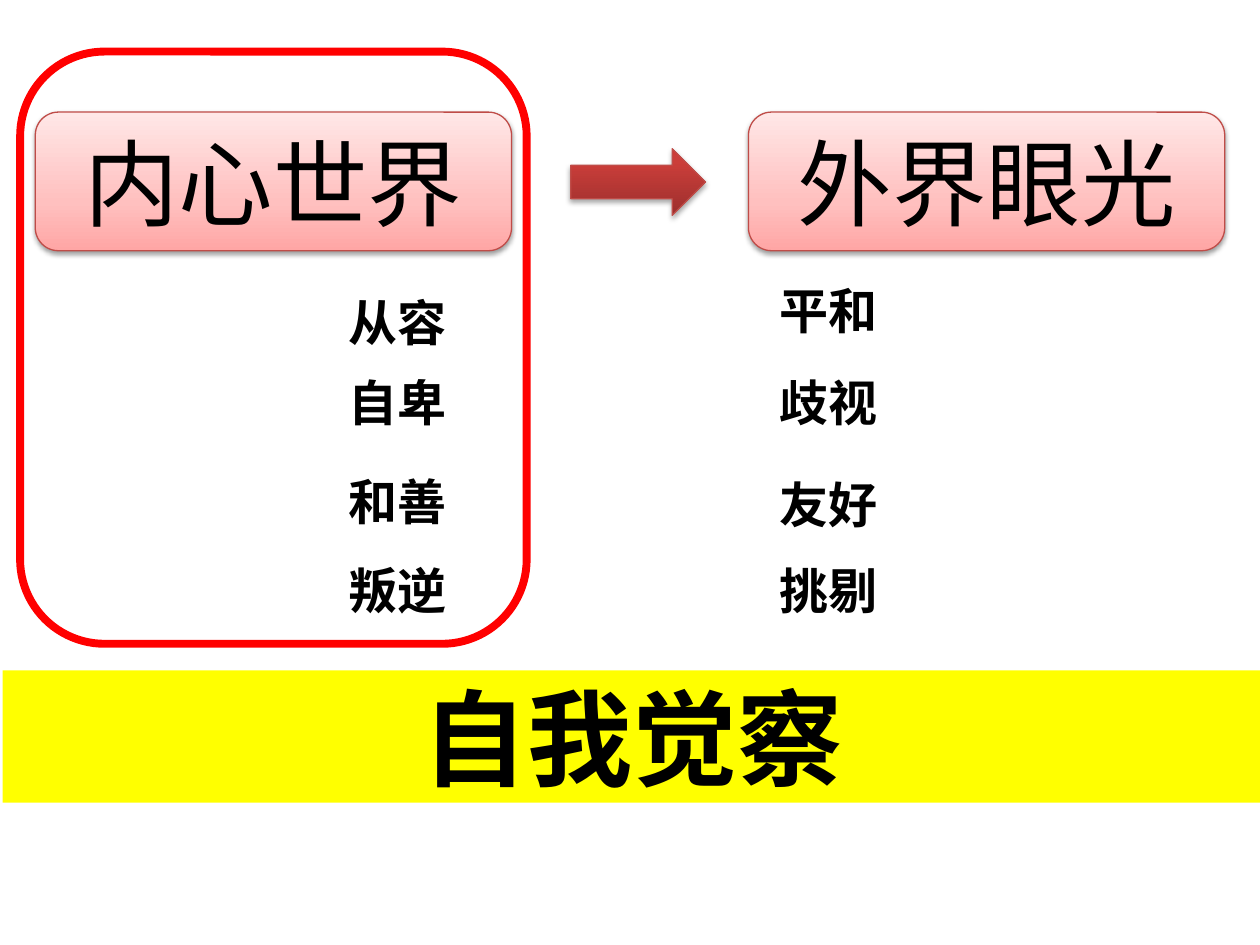
from lxml.etree import SubElement
from pptx import Presentation
from pptx.dml.color import RGBColor
from pptx.enum.shapes import MSO_SHAPE as Shape
from pptx.enum.text import MSO_ANCHOR as Anchor, MSO_AUTO_SIZE as AutoSize, PP_ALIGN as Align
from pptx.oxml import parse_xml
from pptx.oxml.ns import nsdecls, qn
from pptx.util import Inches, Pt

COLORS = {"text": "000000", "edge": "BF4C48", "frame": "FF0000", "banner": "FFFF00"}
PINK = [(0, "FFA6A5"), (35, "FFC0BF"), (100, "FFE7E7")]
RED = [(0, "9C2F2D"), (80, "CB3E3A"), (100, "CE3B37")]
CJK_FONT = "Noto Sans CJK SC"


def write(shape, text, size, font=CJK_FONT, bold=False, anchor=Anchor.MIDDLE):
    """Put one centred line of formatted text into a shape."""
    frame = shape.text_frame
    frame.word_wrap = True
    frame.auto_size = AutoSize.NONE
    frame.vertical_anchor = anchor
    paragraph = frame.paragraphs[0]
    paragraph.alignment = Align.CENTER
    run = paragraph.add_run()
    run.text = text
    run.font.name, run.font.size, run.font.bold = font, Pt(size), bold
    run.font.color.rgb = RGBColor.from_string(COLORS["text"])
    SubElement(run.font._element, qn("a:ea"), typeface=CJK_FONT)


def add_glossy(kind, left, top, width, height, stops, shadow_alpha, shadow_distance):
    """Add a shape with an upward gradient, a thin edge and a soft shadow below."""
    shape = slide.shapes.add_shape(
        kind, Inches(left), Inches(top), Inches(width), Inches(height))
    shape.line.color.rgb = RGBColor.from_string(COLORS["edge"])
    shape.line.width = Pt(0.75)
    shape.fill.background()
    properties = shape._element.spPr
    stop_xml = "".join(
        f'<a:gs pos="{share * 1000}"><a:srgbClr val="{color}"/></a:gs>' for share, color in stops)
    properties.replace(properties.find(qn("a:noFill")), parse_xml(
        f'<a:gradFill {nsdecls("a")} rotWithShape="1"><a:gsLst>{stop_xml}</a:gsLst>'
        '<a:lin ang="16200000" scaled="0"/></a:gradFill>'))
    properties.append(parse_xml(
        f'<a:effectLst {nsdecls("a")}><a:outerShdw blurRad="{Pt(3.1)}" '
        f'dist="{Pt(shadow_distance)}" dir="5400000" rotWithShape="0"><a:srgbClr val="000000">'
        f'<a:alpha val="{shadow_alpha * 1000}"/></a:srgbClr></a:outerShdw></a:effectLst>'))
    return shape


presentation = Presentation()
presentation.slide_width, presentation.slide_height = Inches(10), Inches(7.5)
slide = presentation.slides.add_slide(presentation.slide_layouts[5])

# Column headings
for left, heading in [(0.28, "内心世界"), (5.94, "外界眼光")]:
    box = add_glossy(Shape.ROUNDED_RECTANGLE, left, 0.89, 3.78, 1.1, PINK, 38, 1.6)
    write(box, heading, 54)

# Arrow from the inner world to the outer view
add_glossy(Shape.RIGHT_ARROW, 4.53, 1.18, 1.07, 0.53, RED, 35, 1.8)

# Word pairs: each column has its own row tops
columns = [
    (2.17, [("从容", 2.27), ("自卑", 2.91), ("和善", 3.69), ("叛逆", 4.4)]),
    (5.59, [("平和", 2.18), ("歧视", 2.91), ("友好", 3.72), ("挑剔", 4.4)]),
]
for left, words in columns:
    for word, top in words:
        label = slide.shapes.add_textbox(Inches(left), Inches(top), Inches(1.97), Inches(0.57))
        write(label, word, 28, font="Calibri", bold=True, anchor=Anchor.TOP)

# Red frame around the inner world
frame_box = slide.shapes.add_shape(
    Shape.ROUNDED_RECTANGLE, Inches(0.16), Inches(0.41), Inches(4.02), Inches(4.7))
frame_box.shadow.inherit = False
frame_box.fill.background()
frame_box.line.color.rgb = RGBColor.from_string(COLORS["frame"])
frame_box.line.width = Pt(4.5)

# Yellow title banner
banner = slide.shapes.title
banner.left, banner.top = Inches(0.02), Inches(5.32)
banner.width, banner.height = Inches(10), Inches(1.05)
banner.fill.solid()
banner.fill.fore_color.rgb = RGBColor.from_string(COLORS["banner"])
write(banner, "自我觉察", 60, bold=True)

presentation.save("out.pptx")
